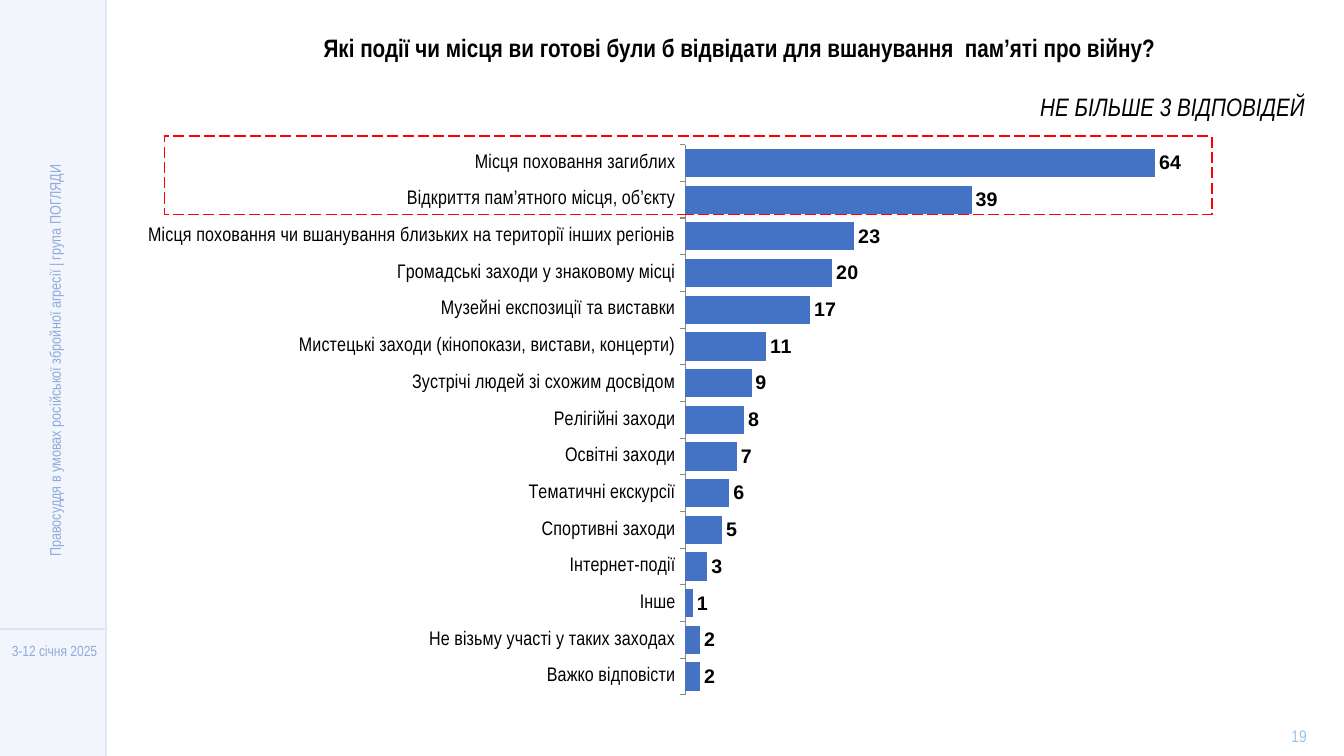
from lxml import etree
from pptx import Presentation
from pptx.chart.data import CategoryChartData as ChartData
from pptx.dml.color import RGBColor
from pptx.enum.chart import XL_CHART_TYPE as Chart, XL_LABEL_POSITION as Spot, XL_TICK_MARK as Tick
from pptx.enum.dml import MSO_LINE as Dash
from pptx.enum.shapes import MSO_CONNECTOR as Link, MSO_SHAPE as Shape
from pptx.enum.text import MSO_ANCHOR as Anchor, PP_ALIGN as Align
from pptx.oxml.ns import qn
from pptx.util import Inches, Pt

NARROW = "Arial Narrow"
rgb = RGBColor.from_string

deck = Presentation()
deck.slide_width, deck.slide_height = Inches(13.33), Inches(7.5)
slide = deck.slides.add_slide(deck.slide_layouts[6])
shapes = slide.shapes


def place(*shares):
    """Turn x, y pairs in percent of the slide into lengths."""
    sides = (deck.slide_width, deck.slide_height) * 2
    return [int(side * share / 100) for side, share in zip(sides, shares)]


def style(font, size, color, name=NARROW, bold=False):
    font.size, font.name, font.bold = Pt(size), name, bold
    font.color.rgb = rgb(color)


# Side band
EDGE = 7.88
band = shapes.add_shape(Shape.RECTANGLE, *place(0, 0, EDGE, 100))
band.shadow.inherit = False
band.fill.solid()
band.fill.fore_color.rgb = rgb("DAE3F3")
tint = band.element.find(".//" + qn("a:srgbClr"))
etree.SubElement(tint, qn("a:alpha"), val="33000")
band.line.fill.background()

for ends, color in (
    ((EDGE, 83.2, 0, 83.2), "DAE3F3"),
    ((EDGE, 0, EDGE, 100), "DEEBF7"),
):
    rule = shapes.add_connector(Link.STRAIGHT, *place(*ends))
    rule.line.color.rgb = rgb(color)
    rule.line.width = Pt(1)
    etree.SubElement(rule.element.spPr, qn("a:effectLst"))

# Small texts: words, place, turn, size, colour, line spacing
notes = [
    ("3-12 січня 2025", (0, 84.27, 8.1, 4), 0, 10.5, "8FAADC", 11),
    ("Правосуддя в умовах російської збройної агресії | група ПОГЛЯДИ",
     (-15.45, 45.73, 38.33, 4), 270, 11, "8FAADC", 20),
    ("19", (94.22, 95.87, 4.88, 2.93), 0, 12, "9DC3E6", None),
]
for words, spot, turn, size, color, lead in notes:
    box = shapes.add_textbox(*place(*spot))
    box.rotation = turn
    frame = box.text_frame
    frame.word_wrap = True
    frame.vertical_anchor = Anchor.MIDDLE
    frame.text = words
    para = frame.paragraphs[0]
    para.alignment = Align.CENTER
    if lead:
        para.line_spacing = Pt(lead)
    style(para.runs[0].font, size, color)

# Bar chart
answers = {
    "Місця поховання загиблих": 64,
    "Відкриття пам’ятного місця, об’єкту": 39,
    "Місця поховання чи вшанування близьких на території інших регіонів": 23,
    "Громадські заходи у знаковому місці": 20,
    "Музейні експозиції та виставки": 17,
    "Мистецькі заходи (кінопокази, вистави, концерти)": 11,
    "Зустрічі людей зі схожим досвідом": 9,
    "Релігійні заходи": 8,
    "Освітні заходи": 7,
    "Тематичні екскурсії": 6,
    "Спортивні заходи": 5,
    "Інтернет-події": 3,
    "Інше": 1,
    "Не візьму участі у таких заходах": 2,
    "Важко відповісти": 2,
}
data = ChartData(number_format="0")
data.categories = list(answers)
data.add_series("Series 1", list(answers.values()))
chart = shapes.add_chart(Chart.BAR_CLUSTERED, *place(7.8, 6, 88.9, 87.6), data).chart
chart.has_legend = chart.has_title = False
style(chart.font, 18, "000000", "Arial")

cats = chart.category_axis
cats.reverse_order = True
cats.major_tick_mark, cats.minor_tick_mark = Tick.OUTSIDE, Tick.NONE
cats.has_major_gridlines = False
cats.format.line.color.rgb = rgb("898989")
cats.format.line.width = Pt(0.75)
style(cats.tick_labels.font, 14, "000000")

scale = chart.value_axis
scale.minimum_scale, scale.maximum_scale = 0, 70
scale.has_major_gridlines = False
scale.visible = False

plot = chart.plots[0]
plot.gap_width = 30
plot.vary_by_categories = False
bars = plot.series[0]
bars.format.fill.solid()
bars.format.fill.fore_color.rgb = rgb("4472C4")
labels = bars.data_labels
labels.show_value = True
labels.position = Spot.OUTSIDE_END
labels.number_format, labels.number_format_is_linked = "0", False
style(labels.font, 14, "000000", "Arial", True)

area = chart.element.find(".//" + qn("c:plotArea"))
for old in area.findall(qn("c:layout")):
    area.remove(old)
layout = etree.Element(qn("c:layout"))
area.insert(0, layout)
manual = etree.SubElement(layout, qn("c:manualLayout"))
for tag, val in (
    ("layoutTarget", "inner"), ("xMode", "edge"), ("yMode", "edge"),
    ("x", "0.486"), ("y", "0.15"), ("w", "0.43"), ("h", "0.831"),
):
    etree.SubElement(manual, qn("c:" + tag), val=val)

# Frame round the top two answers
top = shapes.add_shape(Shape.RECTANGLE, *place(12.23, 18, 77.94, 10.4))
top.shadow.inherit = False
top.fill.background()
top.line.color.rgb = rgb("FF0000")
top.line.width = Pt(1)
top.line.dash_style = Dash.LONG_DASH

# Title and hint
head = shapes.add_textbox(*place(12.23, 3.6, 85.6, 13.47)).text_frame
head.word_wrap = True
head.text = "Які події чи місця ви готові були б відвідати для вшанування  пам’яті про війну?"
title = head.paragraphs[0]
title.alignment = Align.CENTER
style(title.runs[0].font, 18, "000000", bold=True)
hint = head.add_paragraph()
hint.text = "НЕ БІЛЬШЕ 3 ВІДПОВІДЕЙ"
hint.alignment = Align.RIGHT
hint.space_before = Pt(21)
style(hint.runs[0].font, 18, "000000")
hint.runs[0].font.italic = True

deck.save("out.pptx")
